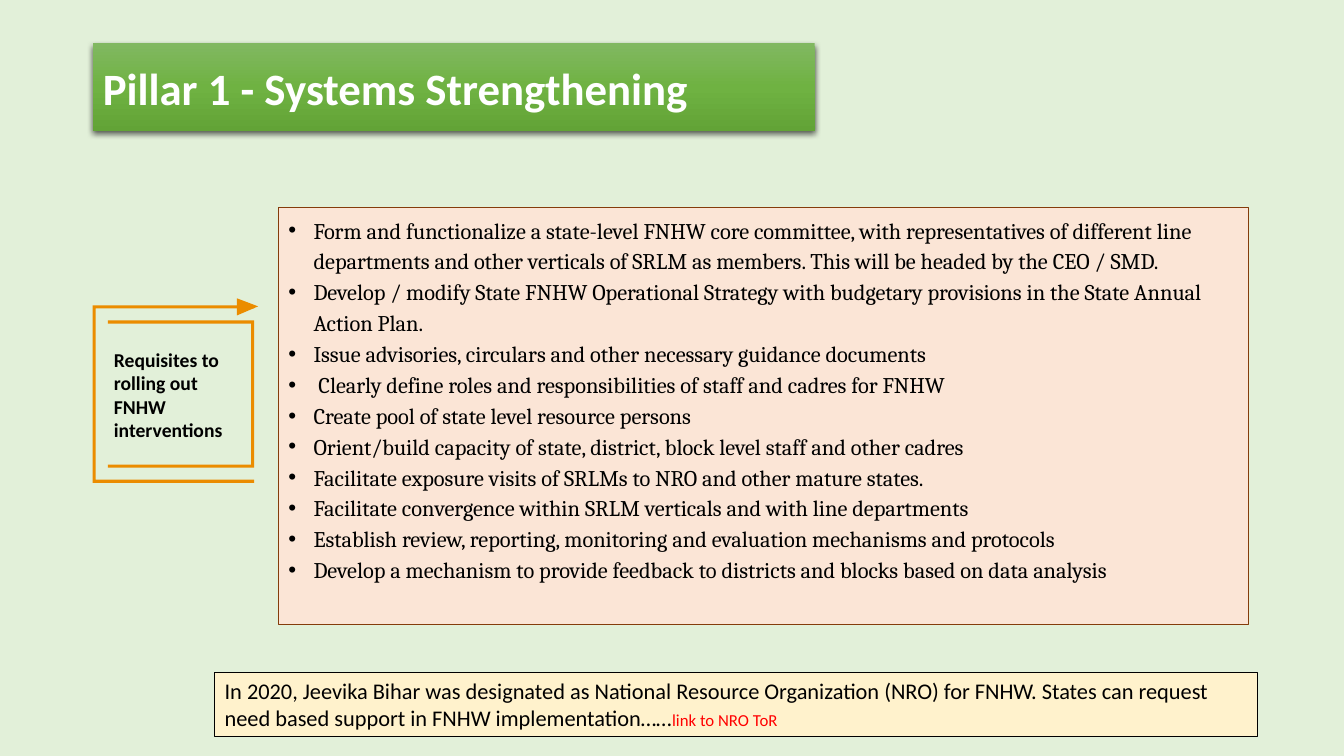
import pptx
import pptx.util
import pptx.dml.color
import pptx.enum.shapes
import pptx.enum.text
import pptx.oxml
import pptx.oxml.ns

Inches = pptx.util.Inches
Pt = pptx.util.Pt
ANCHOR = pptx.enum.text.MSO_ANCHOR
NAMESPACE = pptx.oxml.ns.nsdecls("a")

TITLE = "Pillar 1 - Systems Strengthening"
LABEL = "Requisites to rolling out FNHW interventions"
REQUISITES = [
    "Form and functionalize a state-level FNHW core committee, with representatives of different line departments and other verticals of SRLM as members. This will be headed by the CEO / SMD.",
    "Develop / modify State FNHW Operational Strategy with budgetary provisions in the State Annual Action Plan.",
    "Issue advisories, circulars and other necessary guidance documents",
    " Clearly define roles and responsibilities of staff and cadres for FNHW",
    "Create pool of state level resource persons",
    "Orient/build capacity of state, district, block level staff and other cadres",
    "Facilitate exposure visits of SRLMs to NRO and other mature states.",
    "Facilitate convergence within SRLM verticals and with line departments",
    "Establish review, reporting, monitoring and evaluation mechanisms and protocols",
    "Develop a mechanism to provide feedback to districts and blocks based on data analysis",
]
NOTE = "In 2020, Jeevika Bihar was designated as National Resource Organization (NRO) for FNHW. States can request need based support in FNHW implementation……"
NOTE_LINK = "link to NRO ToR"
GRADIENT = [(0, "81B861"), (50, "6FB242"), (100, "62A336")]
ORANGE = "EB8C00"
STROKE = 0.03
OUTER_BRACKET = (2.52, 0.92, 3.03, 4.79)
INNER_BRACKET = (1.07, 2.52, 3.18, 4.64)
ARROWHEAD = [(2.35, 2.96), (2.56, 3.04), (2.35, 3.13)]


def color(value):
    return pptx.dml.color.RGBColor.from_string(value)


def add_text(paragraph, text, size=16, font="Calibri", fill="000000", bold=False):
    run = paragraph.add_run()
    run.text = text
    run.font.size = Pt(size)
    run.font.name = font
    run.font.bold = bold
    run.font.color.rgb = color(fill)


def place(shape, left, top, width, height, anchor=ANCHOR.TOP):
    shape.left, shape.top = Inches(left), Inches(top)
    shape.width, shape.height = Inches(width), Inches(height)
    frame = shape.text_frame
    frame.word_wrap = True
    frame.auto_size = pptx.enum.text.MSO_AUTO_SIZE.NONE
    frame.vertical_anchor = anchor
    paragraph = frame.paragraphs[0]
    paragraph.alignment = pptx.enum.text.PP_ALIGN.LEFT
    return frame


def paint(shape, fill, line=None, width=1):
    shape.fill.solid()
    shape.fill.fore_color.rgb = color(fill)
    if line:
        shape.line.color.rgb = color(line)
        shape.line.width = Pt(width)
    else:
        shape.line.fill.background()


def add_outline(slide, points):
    points = [(Inches(x), Inches(y)) for x, y in points]
    builder = slide.shapes.build_freeform(*points[0])
    builder.add_line_segments(points[1:], close=True)
    shape = builder.convert_to_shape()
    shape.shadow.inherit = False
    paint(shape, ORANGE)


def bracket_points(open_x, closed_x, top, bottom):
    inner_x = closed_x + (STROKE if open_x > closed_x else -STROKE)
    return [
        (open_x, top), (closed_x, top), (closed_x, bottom), (open_x, bottom),
        (open_x, bottom - STROKE), (inner_x, bottom - STROKE),
        (inner_x, top + STROKE), (open_x, top + STROKE),
    ]


def style_banner(shape):
    stops = "".join(
        f'<a:gs pos="{position * 1000}"><a:srgbClr val="{value}"/></a:gs>'
        for position, value in GRADIENT
    )
    properties = shape._element.spPr
    for xml in (
        f'<a:prstGeom {NAMESPACE} prst="rect"><a:avLst/></a:prstGeom>',
        f'<a:gradFill {NAMESPACE} rotWithShape="1"><a:gsLst>{stops}</a:gsLst>'
        '<a:lin ang="5400000" scaled="0"/></a:gradFill>',
        f'<a:effectLst {NAMESPACE}><a:outerShdw blurRad="{Pt(4.5)}" dist="{Pt(1.5)}" '
        'dir="5400000" algn="ctr" rotWithShape="0"><a:srgbClr val="000000">'
        '<a:alpha val="63000"/></a:srgbClr></a:outerShdw></a:effectLst>',
    ):
        properties.append(pptx.oxml.parse_xml(xml))


def add_bullet(paragraph):
    paragraph.line_spacing = 1.15
    paragraph.space_before = Pt(0)
    properties = paragraph._p.get_or_add_pPr()
    properties.set("marL", str(Inches(0.25)))
    properties.set("indent", str(-Inches(0.25)))
    for xml in (
        f'<a:buFont {NAMESPACE} typeface="Arial"/>',
        f'<a:buChar {NAMESPACE} char="•"/>',
    ):
        properties.append(pptx.oxml.parse_xml(xml))


def main():
    presentation = pptx.Presentation()
    presentation.slide_width = Inches(13.33)
    presentation.slide_height = Inches(7.5)
    slide = presentation.slides.add_slide(presentation.slide_layouts[1])
    slide.background.fill.solid()
    slide.background.fill.fore_color.rgb = color("E2F0D9")

    title = slide.shapes.title
    frame = place(title, 0.92, 0.43, 7.16, 0.87, ANCHOR.MIDDLE)
    add_text(frame.paragraphs[0], TITLE, size=32, fill="FFFFFF", bold=True)
    style_banner(title)

    body = slide.placeholders[1]
    frame = place(body, 2.76, 2.06, 9.62, 4.13)
    paint(body, "FBE5D6", "843C0B", 0.5)
    for index, requisite in enumerate(REQUISITES):
        paragraph = frame.add_paragraph() if index else frame.paragraphs[0]
        add_bullet(paragraph)
        add_text(paragraph, requisite, font="Cambria")

    for bracket in (OUTER_BRACKET, INNER_BRACKET):
        add_outline(slide, bracket_points(*bracket))
    add_outline(slide, ARROWHEAD)

    label = slide.shapes.add_textbox(0, 0, 0, 0)
    frame = place(label, 1.13, 3.45, 1.43, 0.69)
    frame.margin_left = frame.margin_top = frame.margin_bottom = 0
    frame.margin_right = Inches(0.09)
    add_text(frame.paragraphs[0], LABEL, size=14, bold=True)

    note = slide.shapes.add_shape(pptx.enum.shapes.MSO_SHAPE.RECTANGLE, 0, 0, 0, 0)
    note.shadow.inherit = False
    frame = place(note, 2.13, 6.67, 10.34, 0.64)
    paint(note, "FFF2CC", "000000")
    add_text(frame.paragraphs[0], NOTE)
    add_text(frame.paragraphs[0], NOTE_LINK, size=12, fill="FF0000")

    presentation.save("out.pptx")


if __name__ == "__main__":
    main()
